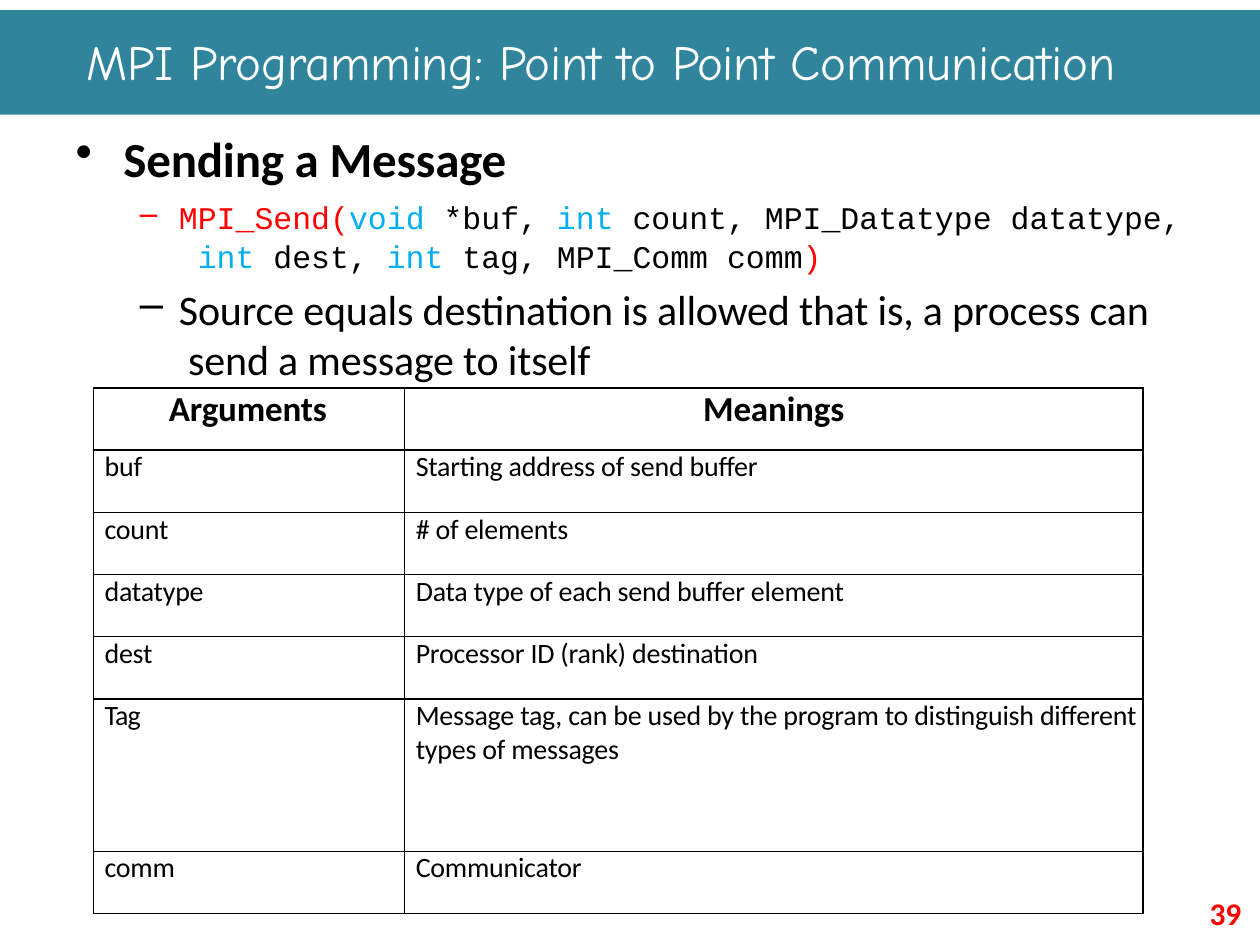
import dataclasses

import pptx
import pptx.dml.color
import pptx.enum.shapes
import pptx.enum.text
import pptx.oxml
import pptx.oxml.ns
import pptx.util
from pptx.util import Inches, Pt

RGB = pptx.dml.color.RGBColor.from_string
ALIGN = pptx.enum.text.PP_ALIGN
ANCHOR = pptx.enum.text.MSO_ANCHOR


@dataclasses.dataclass(frozen=True)
class Theme:
    band: str = "30859C"
    light: str = "FFFFFF"
    ink: str = "000000"
    accent: str = "FF0000"
    keyword: str = "00AFEF"
    title_font: str = "Comic Neue"
    body_font: str = "Calibri"
    code_font: str = "Courier New"
    title: float = 28
    heading: float = 28
    body: float = 24
    header: float = 20
    small: float = 18
    cell: float = 16


T = Theme()

ROWS = [
    ("Arguments", "Meanings"),
    ("buf", "Starting address of send buffer"),
    ("count", "# of elements"),
    ("datatype", "Data type of each send buffer element"),
    ("dest", "Processor ID (rank) destination"),
    ("Tag", "Message tag, can be used by the program to distinguish "
            "different types of messages"),
    ("comm", "Communicator"),
]

SIGNATURE = [
    ("MPI_Send(", T.accent), ("void ", T.keyword), ("*buf, ", T.ink),
    ("int ", T.keyword), ("count, MPI_Datatype datatype,", T.ink), None,
    (" int ", T.keyword), ("dest, ", T.ink), ("int ", T.keyword),
    ("tag, MPI_Comm comm", T.ink), (")", T.accent),
]

SELF_SEND = [
    ("Source equals destination is allowed that is, a process can", T.ink),
    None,
    (" send a message to itself", T.ink),
]


def style(p, size, color=T.ink, font=T.body_font, bold=False):
    p.font.name = font
    p.font.size = Pt(size)
    p.font.bold = bold
    p.font.color.rgb = RGB(color)


def tighten(r, points=-0.1):
    r._r.get_or_add_rPr().set("spc", str(round(points * 100)))


def zero_insets(tf):
    tf.margin_left = tf.margin_right = tf.margin_top = tf.margin_bottom = 0


def indent(p, left, first=0):
    pPr = p._p.get_or_add_pPr()
    pPr.set("marL", str(Inches(left)))
    pPr.set("indent", str(Inches(first)))
    return pPr


def bullet(p, char, left, first):
    pPr = indent(p, left, first)
    mark = pptx.oxml.parse_xml(
        f'<a:buChar {pptx.oxml.ns.nsdecls("a")} char="{char}"/>')
    pPr.insert_element_before(mark, "a:tabLst", "a:defRPr", "a:extLst")


def add_text(s, box):
    tf = s.shapes.add_textbox(*map(Inches, box)).text_frame
    tf.word_wrap = True
    zero_insets(tf)
    return tf


def add_runs(p, parts):
    for part in parts:
        if part is None:
            p.add_line_break()
            continue
        r = p.add_run()
        r.text, color = part
        r.font.color.rgb = RGB(color)


def add_band(s, box):
    sp = s.shapes.add_shape(
        pptx.enum.shapes.MSO_SHAPE.RECTANGLE, *map(Inches, box))
    sp.shadow.inherit = False
    sp.fill.solid()
    sp.fill.fore_color.rgb = RGB(T.band)
    sp.line.fill.background()
    s.shapes._spTree.insert(2, sp._element)


def add_title(s, box, text):
    sp = s.shapes.title
    sp.left, sp.top, sp.width, sp.height = map(Inches, box)
    tf = sp.text_frame
    zero_insets(tf)
    tf.vertical_anchor = ANCHOR.TOP
    tf.auto_size = pptx.enum.text.MSO_AUTO_SIZE.NONE
    p = tf.paragraphs[0]
    p.alignment = ALIGN.LEFT
    indent(p, 0.01)
    style(p, T.title, T.light, T.title_font)
    r = p.add_run()
    r.text = text
    tighten(r)


def add_heading(s, box, text):
    p = add_text(s, box).paragraphs[0]
    bullet(p, "•", 0.39, -0.38)
    style(p, T.heading, bold=True)
    r = p.add_run()
    r.text = text
    tighten(r)


def add_points(s, box):
    tf = add_text(s, box)
    code = tf.paragraphs[0]
    style(code, T.small, T.accent, T.code_font)
    code.line_spacing = Pt(22)
    add_runs(code, SIGNATURE)
    note = tf.add_paragraph()
    style(note, T.body)
    note.space_before = Pt(4.8)
    add_runs(note, SELF_SEND)
    for r in note.runs:
        tighten(r)
    for p in tf.paragraphs:
        bullet(p, "–", 0.33, -0.31)


def add_borders(cell):
    tcPr = cell._tc.get_or_add_tcPr()
    for i, side in enumerate(("lnL", "lnR", "lnT", "lnB")):
        tcPr.insert(i, pptx.oxml.parse_xml(
            f'<a:{side} {pptx.oxml.ns.nsdecls("a")} w="{Pt(1)}">'
            f'<a:solidFill><a:srgbClr val="{T.ink}"/></a:solidFill>'
            f'</a:{side}>'))


def fill_cell(cell, text, header, centred):
    cell.fill.background()
    add_borders(cell)
    cell.margin_left = cell.margin_right = 0
    cell.margin_top = cell.margin_bottom = 0
    p = cell.text_frame.paragraphs[0]
    p.space_before = Pt(1.9 if header else 2.1)
    style(p, T.header if header else T.cell, bold=header)
    if centred:
        p.alignment = ALIGN.CENTER
    else:
        indent(p, 0.6 if header else 0.09)
    r = p.add_run()
    r.text = text
    tighten(r, -0.5 if text == "Tag" else -0.1)


def add_arguments(s, box):
    left, top, width, height = box
    table = s.shapes.add_table(
        len(ROWS), 2, *map(Inches, box)).table
    table.first_row = table.horz_banding = False
    first, tall = 2.47, 1.21
    table.columns[0].width = Inches(first)
    table.columns[1].width = Inches(width - first)
    regular = (height - tall) / (len(ROWS) - 1)
    for i, texts in enumerate(ROWS):
        table.rows[i].height = Inches(tall if texts[0] == "Tag" else regular)
        for j, text in enumerate(texts):
            fill_cell(table.cell(i, j), text, i == 0, i == 0 and j == 1)


def add_number(s, box, text):
    p = add_text(s, box).paragraphs[0]
    indent(p, 0.04)
    p.line_spacing = Pt(18.1)
    style(p, T.small, T.accent, bold=True)
    p.add_run().text = text


def main():
    prs = pptx.Presentation()
    prs.slide_width, prs.slide_height = Inches(10), Inches(7.5)
    s = prs.slides.add_slide(prs.slide_layouts[5])
    add_band(s, (0, 0.08, 10, 0.83))
    add_title(s, (0.68, 0.25, 8.66, 0.47),
              "MPI Programming: Point to Point Communication")
    add_heading(s, (0.59, 1.02, 3.47, 0.47), "Sending a Message")
    add_points(s, (1.09, 1.57, 8.35, 1.5))
    add_arguments(s, (0.74, 3.08, 8.33, 4.17))
    add_number(s, (9.56, 7.14, 0.34, 0.31), "39")
    prs.save("out.pptx")


if __name__ == "__main__":
    main()
